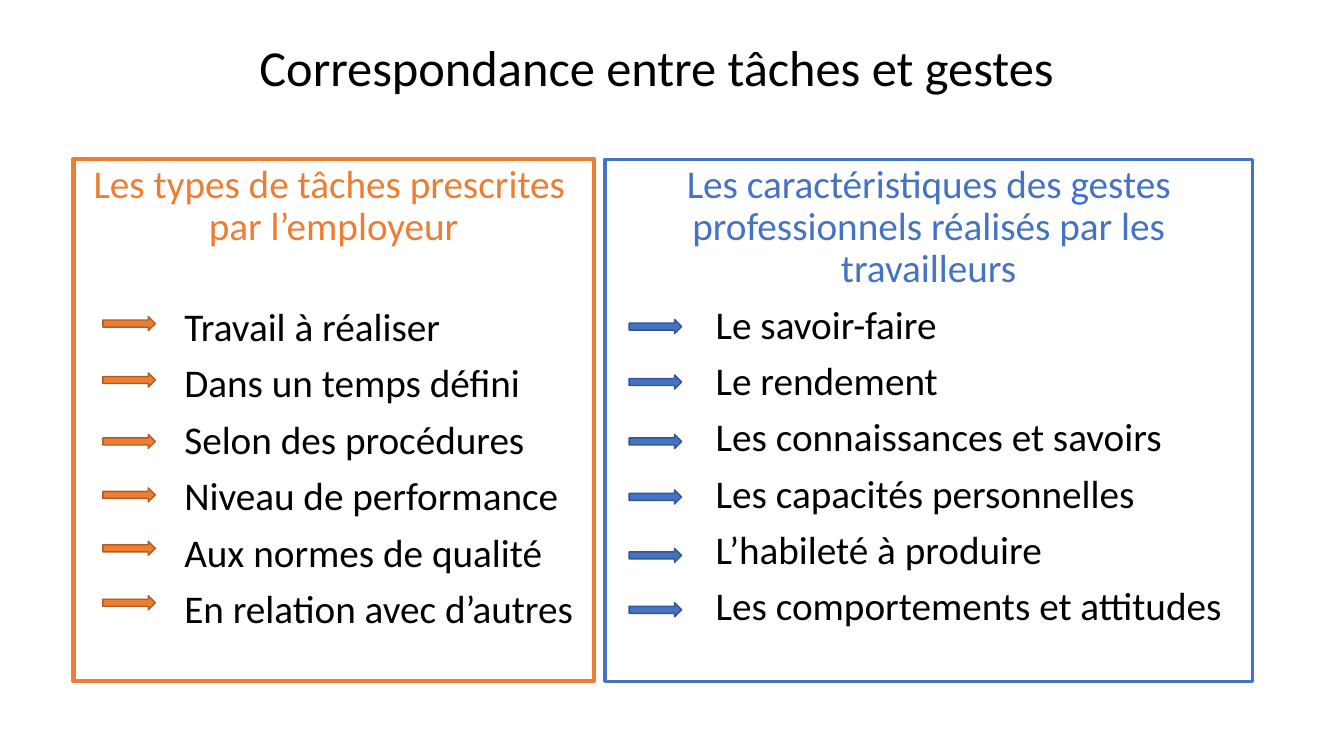
"""Build the slide matching prescribed tasks with professional gestures."""
from pptx import Presentation
from pptx.dml.color import RGBColor
from pptx.enum.shapes import MSO_SHAPE
from pptx.enum.text import MSO_ANCHOR, PP_ALIGN
from pptx.util import Inches, Pt

COLORS = {
    "black": "000000", "white": "FFFFFF",
    "orange": "ED7D31", "dark orange": "AF5C24",
    "blue": "4472C4", "dark blue": "325491",
}
PANELS = [
    {
        "left": 0.73, "width": 5.16, "color": "orange", "edge": "dark orange",
        "border": 3, "filled": False, "list_gap": 42, "arrow_left": 1.02,
        "heading": ["Les types de tâches prescrites ", "par l’employeur"],
        "items": [
            ("Travail à réaliser", 3.14), ("Dans un temps défini", 3.7),
            ("Selon des procédures", 4.31), ("Niveau de performance", 4.84),
            ("Aux normes de qualité", 5.37), ("En relation avec d’autres", 5.91),
        ],
    },
    {
        "left": 6, "width": 6.42, "color": "blue", "edge": "dark blue",
        "border": 2.25, "filled": True, "list_gap": 10, "arrow_left": 6.24,
        "heading": ["Les caractéristiques des gestes professionnels réalisés par les travailleurs"],
        "items": [
            ("Le savoir-faire", 3.17), ("Le rendement", 3.72),
            ("Les connaissances et savoirs", 4.31), ("Les capacités personnelles", 4.86),
            ("L’habileté à produire", 5.44), ("Les comportements et attitudes", 5.98),
        ],
    },
]


def rgb(name):
    return RGBColor.from_string(COLORS[name])


def write(paragraph, text, size, color, align, before=0):
    paragraph.text = text
    paragraph.alignment = align
    paragraph.line_spacing = 0.9
    paragraph.space_before = Pt(before)
    font = paragraph.runs[0].font
    font.name = "Calibri"
    font.size = Pt(size)
    font.color.rgb = rgb(color)


prs = Presentation()
prs.slide_width, prs.slide_height = Inches(13.33), Inches(7.5)
slide = prs.slides.add_slide(prs.slide_layouts[6])

title = slide.shapes.add_textbox(Inches(0.73), Inches(0.24), Inches(11.68), Inches(0.91))
title.text_frame.word_wrap = True
title.text_frame.vertical_anchor = MSO_ANCHOR.MIDDLE
write(title.text_frame.paragraphs[0], "Correspondance entre tâches et gestes ",
      36, "black", PP_ALIGN.CENTER)

for panel in PANELS:
    frame = slide.shapes.add_shape(MSO_SHAPE.RECTANGLE, Inches(panel["left"]), Inches(1.58),
                                   Inches(panel["width"]), Inches(5.18))
    frame.shadow.inherit = False
    if panel["filled"]:
        frame.fill.solid()
        frame.fill.fore_color.rgb = rgb("white")
    else:
        frame.fill.background()
    frame.line.color.rgb = rgb(panel["color"])
    frame.line.width = Pt(panel["border"])

    content = frame.text_frame
    content.word_wrap = True
    content.vertical_anchor = MSO_ANCHOR.TOP
    for index, heading in enumerate(panel["heading"]):
        paragraph = content.add_paragraph() if index else content.paragraphs[0]
        write(paragraph, heading, 28, panel["color"], PP_ALIGN.CENTER)

    for index, (item, arrow_top) in enumerate(panel["items"]):
        paragraph = content.add_paragraph()
        write(paragraph, item, 28, "black", PP_ALIGN.LEFT, 10 if index else panel["list_gap"])
        paragraph._p.get_or_add_pPr().set("marL", str(Inches(1)))

        arrow = slide.shapes.add_shape(MSO_SHAPE.RIGHT_ARROW, Inches(panel["arrow_left"]),
                                       Inches(arrow_top), Inches(0.52), Inches(0.14))
        arrow.shadow.inherit = False
        arrow.fill.solid()
        arrow.fill.fore_color.rgb = rgb(panel["color"])
        arrow.line.color.rgb = rgb(panel["edge"])
        arrow.line.width = Pt(1)

prs.save("out.pptx")
